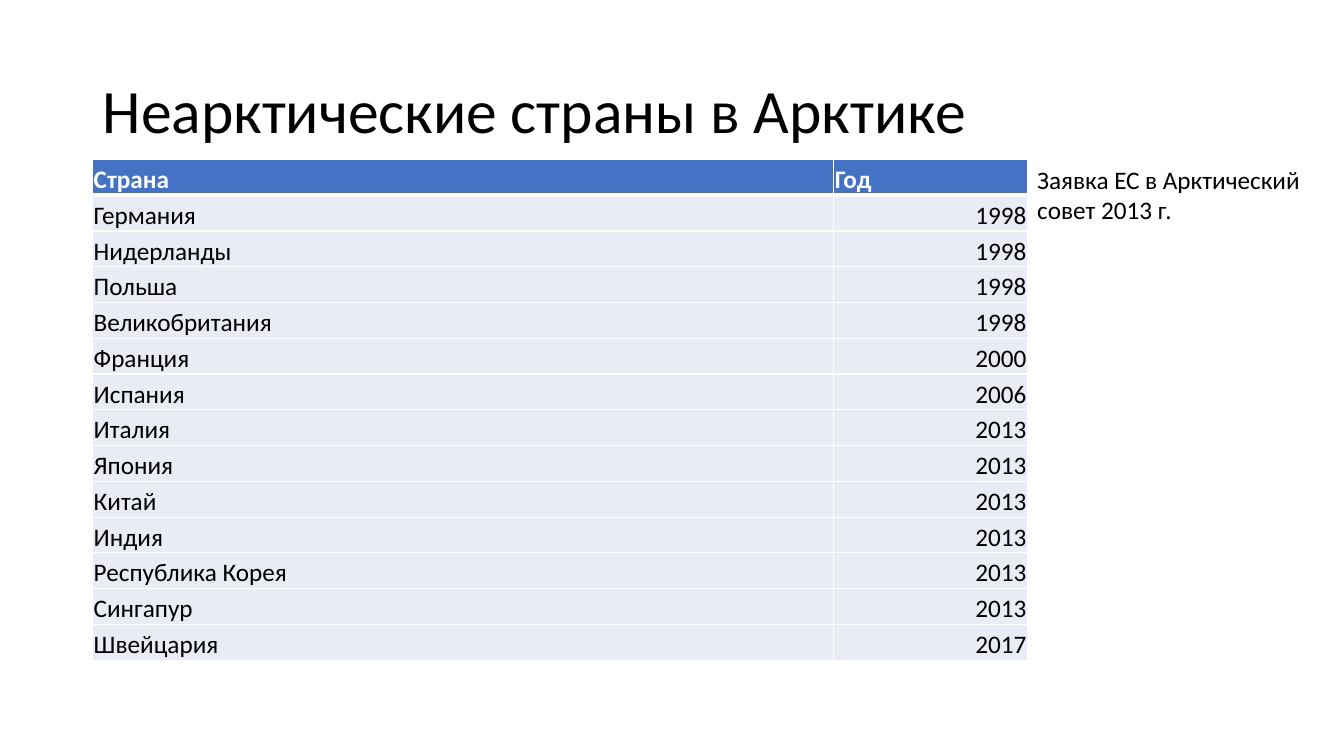
import dataclasses

import lxml.etree
import pptx
import pptx.dml.color
import pptx.enum.text
import pptx.oxml.ns
import pptx.util

ALIGN = pptx.enum.text.PP_ALIGN
ANCHOR = pptx.enum.text.MSO_ANCHOR


@dataclasses.dataclass(frozen=True)
class Theme:
    font: str = "Calibri"
    title_size: int = 44
    body_size: int = 18
    text: str = "000000"
    light: str = "FFFFFF"
    header: str = "4472C4"
    row: str = "E9EBF5"
    thin_border: int = 1
    header_border: int = 3


class SlideBuilder:
    """Draws elements on one slide; boxes are left, top, width, height in percent."""

    def __init__(self, presentation, theme):
        self.presentation = presentation
        self.theme = theme
        self.slide = presentation.slides.add_slide(presentation.slide_layouts[6])

    def place(self, box):
        width, height = self.presentation.slide_width, self.presentation.slide_height
        return [pptx.util.Emu(round(share * full / 100))
                for share, full in zip(box, (width, height, width, height))]

    def fill_paragraph(self, paragraph, text, size, color, bold=False):
        paragraph.text = text
        for run in paragraph.runs:
            run.font.name = self.theme.font
            run.font.size = pptx.util.Pt(size)
            run.font.bold = bold
            run.font.color.rgb = pptx.dml.color.RGBColor.from_string(color)

    def text(self, text, box, size, anchor=ANCHOR.TOP, line_spacing=1.0):
        shape = self.slide.shapes.add_textbox(*self.place(box))
        frame = shape.text_frame
        frame.word_wrap = True
        frame.vertical_anchor = anchor
        paragraph = frame.paragraphs[0]
        paragraph.line_spacing = line_spacing
        self.fill_paragraph(paragraph, text, size, self.theme.text)

    def borders(self, cell, top, bottom):
        """Line all four sides; top and bottom are widths in points."""
        thin = self.theme.thin_border
        sides = {"lnL": thin, "lnR": thin, "lnT": top, "lnB": bottom}
        properties = cell._tc.get_or_add_tcPr()
        qn = pptx.oxml.ns.qn
        for index, (side, width) in enumerate(sides.items()):
            line = lxml.etree.Element(qn(f"a:{side}"), w=str(int(pptx.util.Pt(width))))
            fill = lxml.etree.SubElement(line, qn("a:solidFill"))
            lxml.etree.SubElement(fill, qn("a:srgbClr"), val=self.theme.light)
            properties.insert(index, line)

    def cell(self, cell, text, is_header, align):
        theme = self.theme
        cell.fill.solid()
        cell.fill.fore_color.rgb = pptx.dml.color.RGBColor.from_string(
            theme.header if is_header else theme.row)
        cell.margin_left = cell.margin_right = cell.margin_top = pptx.util.Inches(0.01)
        cell.margin_bottom = 0
        cell.vertical_anchor = ANCHOR.BOTTOM
        paragraph = cell.text_frame.paragraphs[0]
        paragraph.alignment = align
        self.fill_paragraph(paragraph, text, theme.body_size,
                            theme.light if is_header else theme.text, is_header)

    def table(self, rows, box, column_shares):
        left, top, width, height = self.place(box)
        table = self.slide.shapes.add_table(
            len(rows), len(column_shares), left, top, width, height).table
        table.horz_banding = False
        for column, share in zip(table.columns, column_shares):
            column.width = round(width * share / sum(column_shares))
        theme = self.theme
        for row_index, values in enumerate(rows):
            table.rows[row_index].height = round(height / len(rows))
            is_header = row_index == 0
            for column_index, value in enumerate(values):
                cell = table.cell(row_index, column_index)
                is_number = isinstance(value, int)
                self.cell(cell, str(value), is_header,
                          ALIGN.RIGHT if is_number else ALIGN.LEFT)
                self.borders(
                    cell,
                    top=theme.header_border if row_index == 1 else theme.thin_border,
                    bottom=theme.header_border if is_header else theme.thin_border)


OBSERVERS = [
    ("Страна", "Год"),
    ("Германия", 1998),
    ("Нидерланды", 1998),
    ("Польша", 1998),
    ("Великобритания", 1998),
    ("Франция", 2000),
    ("Испания", 2006),
    ("Италия", 2013),
    ("Япония", 2013),
    ("Китай", 2013),
    ("Индия", 2013),
    ("Республика Корея", 2013),
    ("Сингапур", 2013),
    ("Швейцария", 2017),
]


def main():
    presentation = pptx.Presentation()
    presentation.slide_width = pptx.util.Inches(13.33)
    presentation.slide_height = pptx.util.Inches(7.5)
    theme = Theme()
    builder = SlideBuilder(presentation, theme)

    left, table_top, table_width = 6.9, 21.1, 69.54
    builder.text("Неарктические страны в Арктике", (left, 5.33, 86.25, 19.33),
                 theme.title_size, ANCHOR.MIDDLE, line_spacing=0.9)
    builder.table(OBSERVERS, (left, table_top, table_width, 66.27), (7.35, 1.92))
    builder.text("Заявка ЕС в Арктический совет 2013 г.",
                 (left + table_width, table_top, 22.05, 9.47), theme.body_size)
    presentation.save("out.pptx")


if __name__ == "__main__":
    main()
